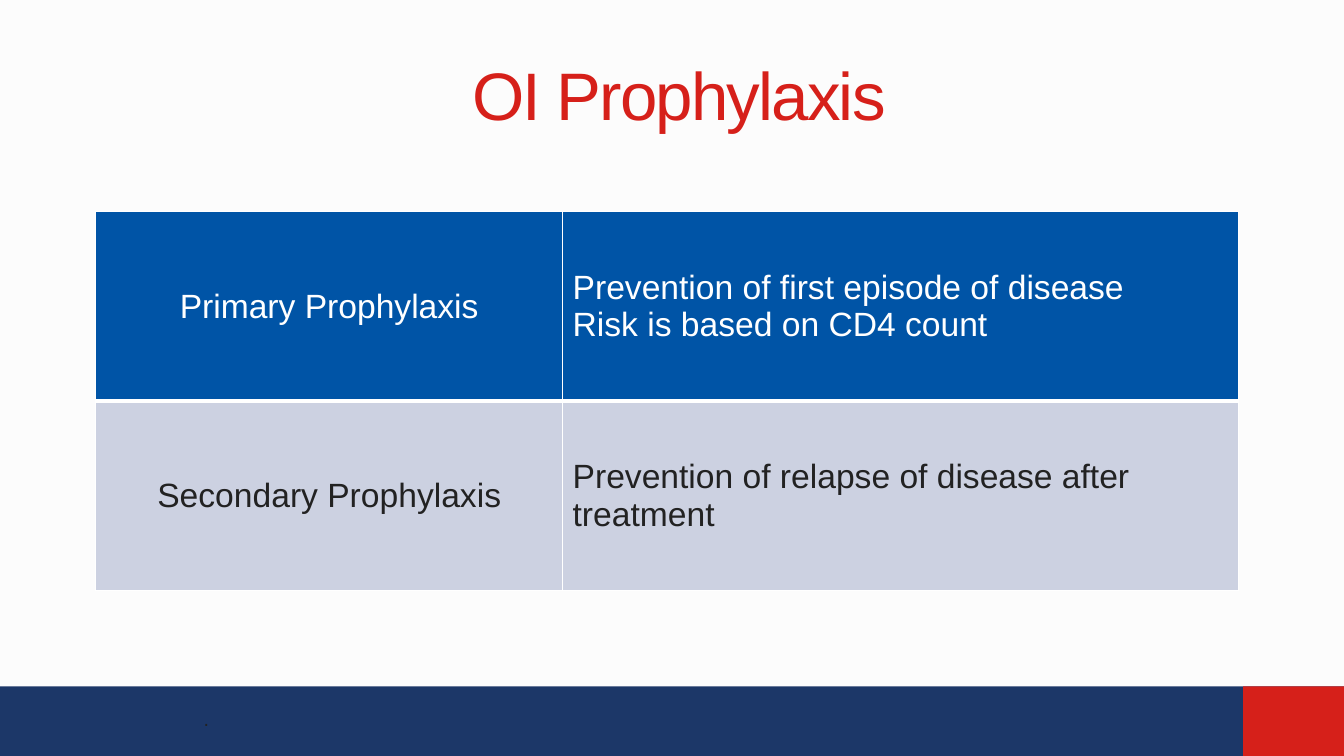
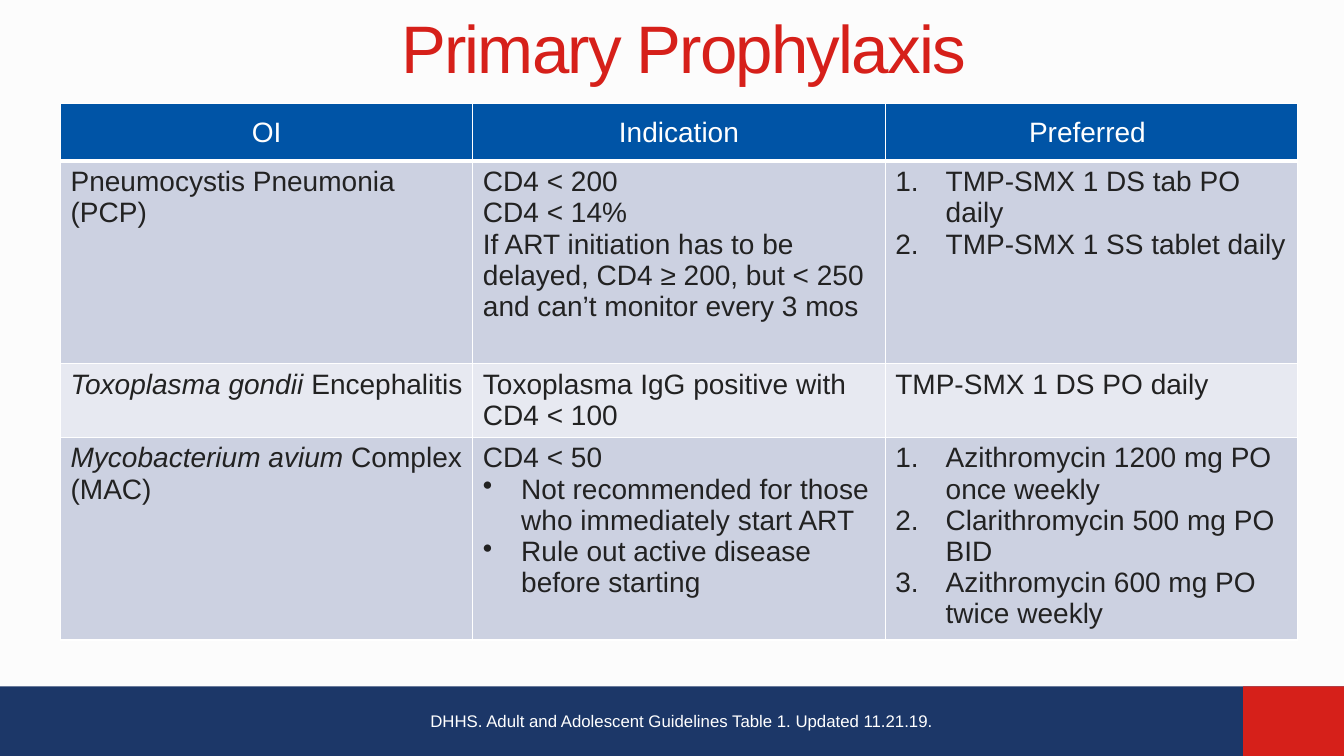
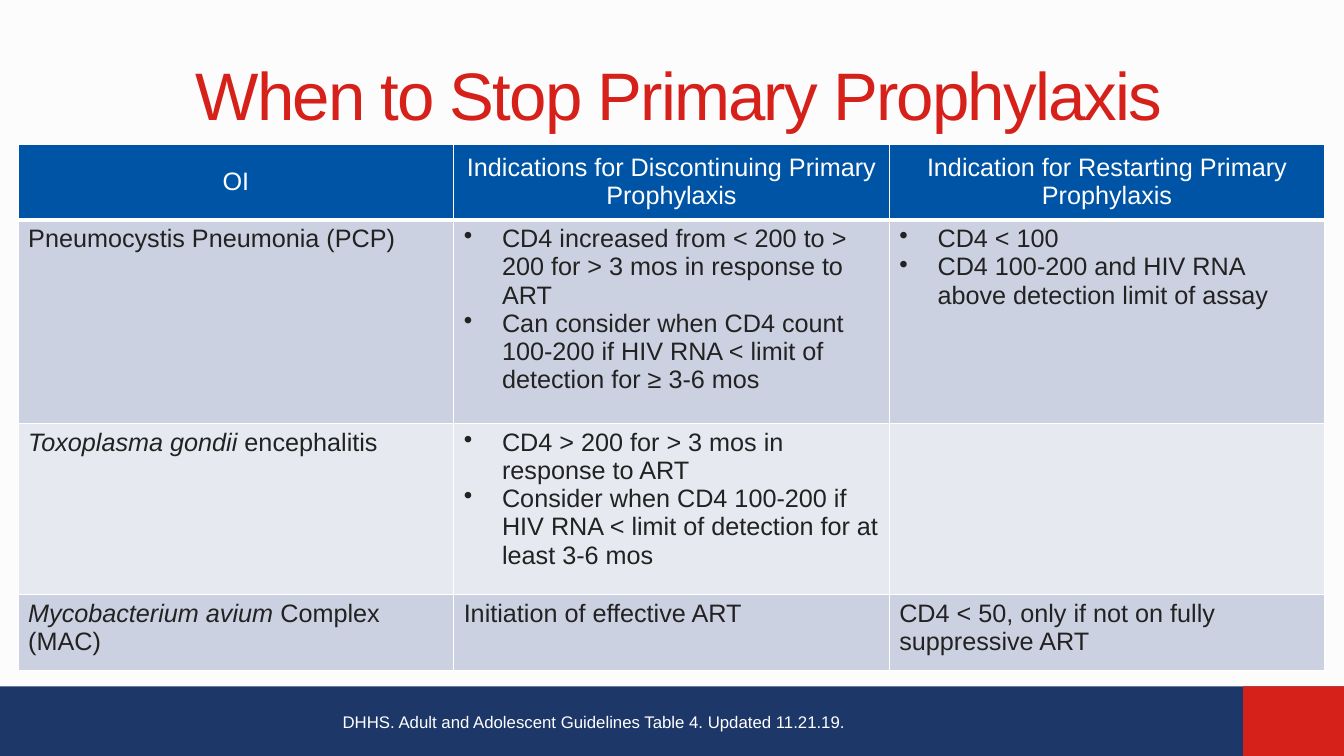
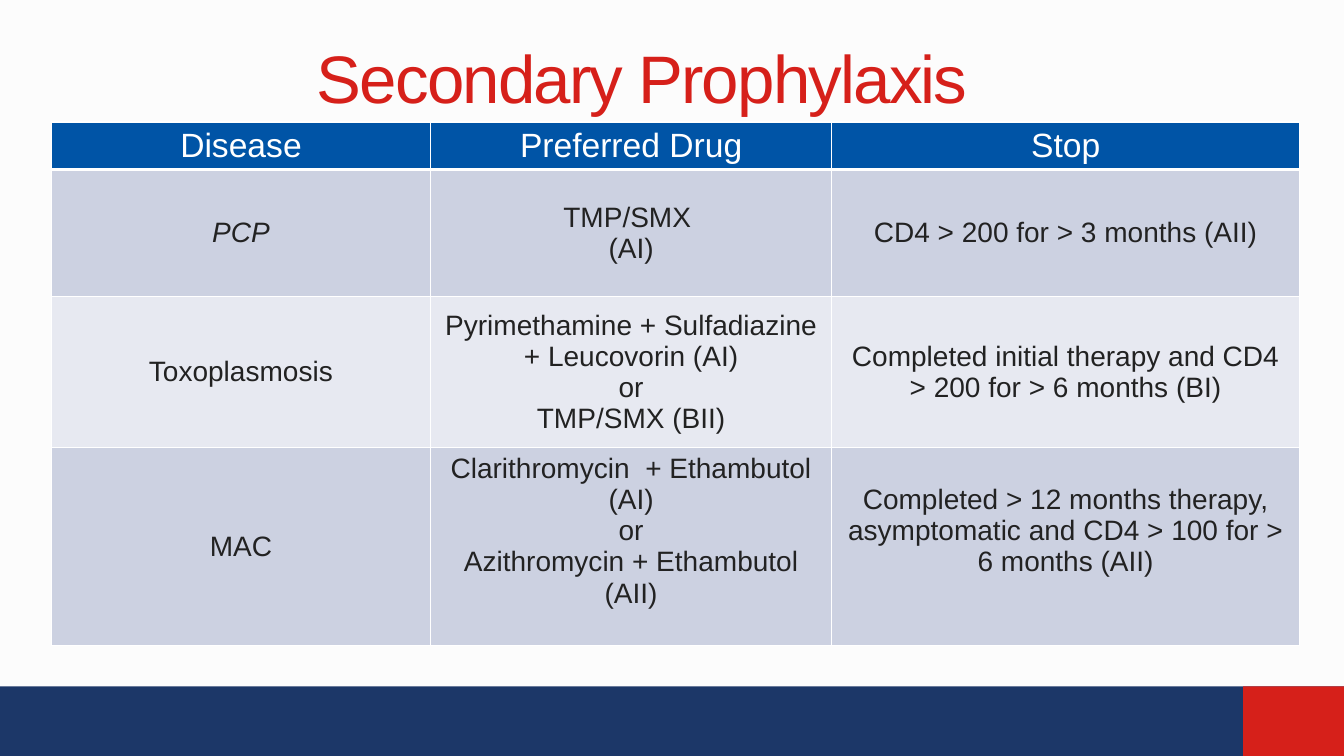
from lxml import etree
from pptx import Presentation
from pptx.dml.color import RGBColor
from pptx.enum.shapes import MSO_SHAPE
from pptx.enum.text import MSO_ANCHOR, MSO_AUTO_SIZE, PP_ALIGN
from pptx.oxml.ns import qn
from pptx.util import Inches, Pt

LEFT, CENTER = PP_ALIGN.LEFT, PP_ALIGN.CENTER
TOP, MIDDLE = MSO_ANCHOR.TOP, MSO_ANCHOR.MIDDLE
RECT = MSO_SHAPE.RECTANGLE
NO_FIT = MSO_AUTO_SIZE.NONE

FONT = "Arial"
PAPER, NAVY, RED = "FCFCFC", "1C3768", "D6201A"
BLUE, LAVENDER, PALE = "0054A6", "CCD1E1", "E7E9F1"
WHITE, INK = "FFFFFF", "222222"

BANDS = [(0, 13.33, NAVY), (12.33, 1, RED)]
WIDE_TITLE = (0.67, 0.3, 12.13, 1.25)
LIST_STYLES = {
    "• ": (0.38, "a:buChar", {"char": "•"}),
    "# ": (0.5, "a:buAutoNum", {"type": "arabicPeriod"}),
}

SLIDES = [
    dict(
        title="OI Prophylaxis", title_at=WIDE_TITLE,
        at=(0.95, 2.1), cols=[4.63, 6.7], heights=[1.88, 1.88],
        head_size=24, size=24, head_aligns=[CENTER, LEFT],
        aligns=[CENTER, LEFT], anchor=MIDDLE,
        rows=[
            ["Primary Prophylaxis",
             ["Prevention of first episode of disease",
              "Risk is based on CD4 count"]],
            ["Secondary Prophylaxis",
             "Prevention of relapse of disease after treatment"],
        ],
        note=".", note_at=(1.92, 6.96, 9.75, 0.34),
        note_format=dict(size=14, color=INK, anchor=MIDDLE), note_wrap=True,
    ),
    dict(
        title="Primary Prophylaxis", title_at=(2.96, 0.08, 7.64, 0.77),
        at=(0.6, 1.03), cols=[4.09] * 3, heights=[0.57, 2.01, 0.73, 2.01],
        head_size=20, size=20,
        rows=[
            ["OI", "Indication", "Preferred "],
            ["Pneumocystis Pneumonia (PCP)",
             ["CD4 < 200", "CD4 < 14%",
              "If ART initiation has to be delayed, CD4 ≥ 200, but < 250 "
              "and can’t monitor every 3 mos"],
             ["# TMP-SMX 1 DS tab PO daily", "# TMP-SMX 1 SS tablet daily"]],
            ["*Toxoplasma gondii* Encephalitis",
             "Toxoplasma IgG positive with CD4 < 100",
             "TMP-SMX 1 DS PO daily"],
            ["*Mycobacterium avium* Complex (MAC)",
             ["CD4 < 50",
              "• Not recommended for those who immediately start ART",
              "• Rule out active disease before starting"],
             ["# Azithromycin 1200 mg PO once weekly",
              "# Clarithromycin 500 mg PO BID",
              "# Azithromycin 600 mg PO twice weekly"]],
        ],
        note="DHHS. Adult and Adolescent Guidelines Table 1. Updated 11.21.19.",
        note_at=(4.17, 7, 5.22, 0.3),
    ),
    dict(
        title="When to Stop Primary Prophylaxis", title_at=WIDE_TITLE,
        at=(0.18, 1.43), cols=[4.32] * 3, heights=[0.75, 2.02, 1.7, 0.75],
        head_size=18, size=18,
        rows=[
            ["OI", "Indications for Discontinuing Primary Prophylaxis",
             "Indication for Restarting Primary Prophylaxis"],
            ["Pneumocystis Pneumonia (PCP)",
             ["• CD4 increased from < 200 to > 200 for > 3 mos in response "
              "to ART",
              "• Can consider when CD4 count 100-200 if HIV RNA < limit of "
              "detection for ≥ 3-6 mos"],
             ["• CD4 < 100",
              "• CD4 100-200 and HIV RNA above detection limit of assay"]],
            ["*Toxoplasma gondii* encephalitis",
             ["• CD4 > 200 for > 3 mos in response to ART",
              "• Consider when CD4 100-200 if HIV RNA < limit of detection "
              "for at least 3-6 mos"],
             ""],
            ["*Mycobacterium avium* Complex (MAC)",
             "Initiation of effective ART",
             "CD4 < 50, only if not on fully suppressive ART"],
        ],
        note="DHHS. Adult and Adolescent Guidelines Table 4. Updated 11.21.19.",
        note_at=(3.3, 7.01, 5.22, 0.61),
    ),
    dict(
        title="Secondary Prophylaxis", title_at=(0.58, 0.38, 11.58, 0.77),
        at=(0.51, 1.21), cols=[3.76, 3.98, 4.64],
        heights=[0.47, 1.26, 1.5, 1.95],
        head_size=24, size=20, aligns=[CENTER] * 3, anchor=MIDDLE,
        bottom_insets={(3, 1): 0.36, (3, 2): 0.36},
        rows=[
            ["Disease", "Preferred Drug", "Stop"],
            ["*PCP*", ["TMP/SMX ", "(AI)"], "CD4 > 200 for > 3 months (AII)"],
            ["Toxoplasmosis",
             ["Pyrimethamine + Sulfadiazine + Leucovorin (AI)", "or",
              "TMP/SMX (BII)"],
             "Completed initial therapy and CD4 > 200 for > 6 months (BI)"],
            ["MAC",
             ["Clarithromycin  + Ethambutol (AI)", "or",
              "Azithromycin + Ethambutol (AII)"],
             "Completed > 12 months therapy, asymptomatic and CD4 > 100 for "
             "> 6 months (AII)"],
        ],
    ),
]


def rgb(color):
    return RGBColor.from_string(color)


def inches(values):
    return [Inches(v) for v in values]


def write(tf, text, size=12, color=WHITE, align=LEFT, anchor=TOP, spacing=None):
    tf.vertical_anchor = anchor
    for i, line in enumerate([text] if isinstance(text, str) else text):
        p = tf.paragraphs[0] if i == 0 else tf.add_paragraph()
        p.alignment = align
        if line[:2] in LIST_STYLES:
            indent, tag, attrs = LIST_STYLES[line[:2]]
            line = line[2:]
            pPr = p._p.get_or_add_pPr()
            pPr.set("marL", str(Inches(indent)))
            pPr.set("indent", str(-Inches(indent)))
            etree.SubElement(pPr, qn(tag), attrs)
        for j, part in enumerate(line.split("*")):
            if not part:
                continue
            r = p.add_run()
            r.text = part
            font = r.font
            font.name, font.size, font.bold = FONT, Pt(size), False
            font.italic = j % 2 == 1
            font.color.rgb = rgb(color)
            if spacing:
                r._r.get_or_add_rPr().set("spc", str(int(spacing * 100)))


def set_borders(cell, bottom):
    tcPr = cell._tc.get_or_add_tcPr()
    widths = {"a:lnL": 1, "a:lnR": 1, "a:lnT": 1, "a:lnB": bottom}
    for i, (tag, width) in enumerate(widths.items()):
        ln = etree.Element(qn(tag), w=str(Pt(width)))
        fill = etree.SubElement(ln, qn("a:solidFill"))
        etree.SubElement(fill, qn("a:srgbClr"), val=WHITE)
        tcPr.insert(i, ln)


def add_grid(s, data):
    rows, cols, heights = data["rows"], data["cols"], data["heights"]
    size = inches((sum(cols), sum(heights)))
    table = s.shapes.add_table(len(rows), len(cols), *inches(data["at"]), *size).table
    table.horz_banding = False
    for column, width in zip(table.columns, cols):
        column.width = Inches(width)
    for i, row in enumerate(rows):
        table.rows[i].height = Inches(heights[i])
        head = i == 0
        fill = BLUE if head else LAVENDER if i % 2 else PALE
        aligns = (data.get("head_aligns", [CENTER] * len(cols)) if head
                  else data.get("aligns", [LEFT] * len(cols)))
        for j, text in enumerate(row):
            cell = table.cell(i, j)
            cell.fill.solid()
            cell.fill.fore_color.rgb = rgb(fill)
            set_borders(cell, 3 if head else 1)
            write(cell.text_frame, text,
                  size=data["head_size"] if head else data["size"],
                  color=WHITE if head else INK, align=aligns[j])
            cell.vertical_anchor = MIDDLE if head else data.get("anchor", TOP)
            cell.margin_bottom = Inches(data.get("bottom_insets", {}).get((i, j), 0.05))


def add_title(s, text, at):
    title = s.shapes.title
    title.left, title.top, title.width, title.height = inches(at)
    tf = title.text_frame
    tf.auto_size, tf.word_wrap = NO_FIT, True
    tf.margin_left = tf.margin_right = Inches(0.13)
    tf.margin_top = tf.margin_bottom = Inches(0.07)
    write(tf, text, size=48, color=RED, align=CENTER, anchor=MIDDLE, spacing=-1.3)


def add_note(s, data):
    tf = s.shapes.add_textbox(*inches(data["note_at"])).text_frame
    tf.word_wrap = data.get("note_wrap", False)
    write(tf, data["note"], **data.get("note_format", {}))


def style_layout(layout, s):
    layout.background.fill.solid()
    layout.background.fill.fore_color.rgb = rgb(PAPER)
    for ph in list(layout.placeholders)[1:]:
        layout.shapes.element.remove(ph.element)
    bands = []
    for left, width, color in BANDS:
        band = s.shapes.add_shape(RECT, *inches((left, 6.81, width, 0.7)))
        band.shadow.inherit = False
        band.fill.solid()
        band.fill.fore_color.rgb = rgb(color)
        band.line.fill.background()
        bands.append(band)
    for i, band in enumerate(bands):
        layout.shapes.element.insert(2 + i, band.element)


def main():
    prs = Presentation()
    prs.slide_width, prs.slide_height = inches((13.33, 7.5))
    layout = prs.slide_layouts[5]
    for i, data in enumerate(SLIDES):
        s = prs.slides.add_slide(layout)
        if i == 0:
            style_layout(layout, s)
        add_title(s, data["title"], data["title_at"])
        add_grid(s, data)
        if "note" in data:
            add_note(s, data)
    prs.save("out.pptx")


if __name__ == "__main__":
    main()
